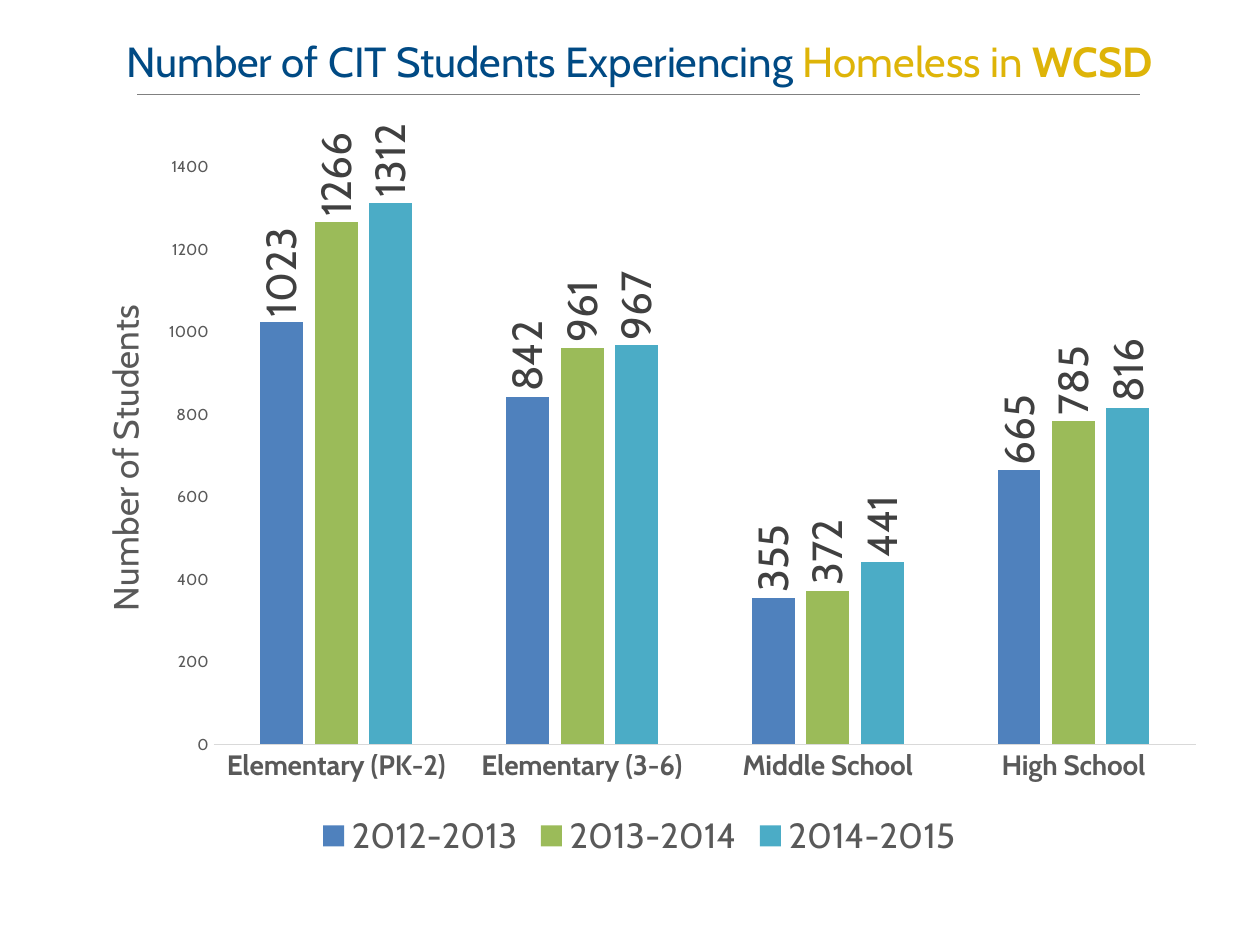
"""Build a slide with a column chart of students experiencing homelessness by school level."""
from dataclasses import dataclass

from lxml import etree
from pptx import Presentation
from pptx import util as u
from pptx.chart import data as chart_data
from pptx.dml import color
from pptx.enum import chart as ch, shapes, text
from pptx.oxml import ns

WIDTH, HEIGHT = u.Inches(10), u.Inches(7.5)
FONT = "Cabin"
COLORS = {
    "navy": "004A84", "gold": "DEB408", "rule": "808080", "axis": "D9D9D9",
    "gray": "595959", "label": "404040",
    "blue": "4F81BD", "green": "9BBB59", "teal": "4BACC6",
}
LEVELS = ["Elementary (PK-2)", "Elementary (3-6)", "Middle School", "High School"]


@dataclass(frozen=True)
class Year:
    name: str
    counts: tuple
    color: str


@dataclass(frozen=True)
class Area:
    left: float
    top: float
    width: float
    height: float

    def on_slide(self) -> tuple:
        """Turn shares of the slide into lengths."""
        return (int(self.left * WIDTH), int(self.top * HEIGHT),
                int(self.width * WIDTH), int(self.height * HEIGHT))


YEARS = [
    Year("2012-2013", (1023, 842, 355, 665), "blue"),
    Year("2013-2014", (1266, 961, 372, 785), "green"),
    Year("2014-2015", (1312, 967, 441, 816), "teal"),
]
TITLE_AREA = Area(0.047, 0.031, 0.921, 0.115)
CHART_AREA = Area(0.047, 0.116, 0.921, 0.799)


def rgb(name: str) -> color.RGBColor:
    """Look up a named colour."""
    return color.RGBColor.from_string(COLORS[name])


def format_font(font, *, size: float, tint: str, bold: bool = False) -> None:
    """Set the face, size, colour and weight of a font."""
    font.name, font.size, font.bold = FONT, u.Pt(size), bold
    font.color.rgb = rgb(tint)


def add_text(para, words: str, **style) -> None:
    """Add one formatted span to a paragraph."""
    span = para.add_run()
    span.text = words
    format_font(span.font, **style)


def set_layout(parent, **shares: float) -> None:
    """Place a chart part by shares of the chart's size."""
    layout = parent.find(ns.qn("c:layout"))
    if layout is None:
        layout = etree.Element(ns.qn("c:layout"))
        before = parent.find(ns.qn("c:tx"))
        parent.insert(0 if before is None else parent.index(before) + 1, layout)
    manual = etree.SubElement(layout, ns.qn("c:manualLayout"))
    settings = {"layoutTarget": "inner"} if "w" in shares else {}
    settings |= {"xMode": "edge", "yMode": "edge"} | shares
    for tag, value in settings.items():
        etree.SubElement(manual, ns.qn(f"c:{tag}"), val=str(value))


def add_title(page) -> None:
    """Fill the title placeholder and draw the rule below it."""
    box = page.shapes.title
    box.left, box.top, box.width, box.height = TITLE_AREA.on_slide()
    frame = box.text_frame
    frame.word_wrap = True
    frame.vertical_anchor = text.MSO_ANCHOR.TOP
    para = frame.paragraphs[0]
    para.alignment = text.PP_ALIGN.CENTER
    add_text(para, "Number of CIT Students Experiencing ", size=24, tint="navy")
    add_text(para, "Homeless in ", size=24, tint="gold")
    add_text(para, "WCSD", size=24, tint="gold", bold=True)


def add_rule(page) -> None:
    """Draw the thin line under the title."""
    left, top, width, _ = Area(0.109, 0.1, 0.796, 0).on_slide()
    rule = page.shapes.add_connector(shapes.MSO_CONNECTOR.STRAIGHT, left, top, left + width, top)
    rule.line.color.rgb = rgb("rule")
    rule.line.width = u.Pt(0.75)
    etree.SubElement(rule._element.spPr, ns.qn("a:effectLst"))


def format_axes(chart) -> None:
    """Style the level axis and the student count axis."""
    levels, counts = chart.category_axis, chart.value_axis
    for axis in (levels, counts):
        axis.has_major_gridlines = False
        axis.major_tick_mark = axis.minor_tick_mark = ch.XL_TICK_MARK.NONE
    format_font(levels.tick_labels.font, size=16, tint="gray", bold=True)
    levels.format.line.color.rgb = rgb("axis")
    levels.format.line.width = u.Pt(0.75)
    format_font(counts.tick_labels.font, size=9, tint="gray")
    counts.format.line.fill.background()
    counts.minimum_scale, counts.maximum_scale, counts.major_unit = 0, 1500, 200
    title = counts.axis_title
    frame = title.text_frame
    add_text(frame.paragraphs[0], "Number of Students", size=20, tint="gray")
    frame._txBody.bodyPr.set("rot", "-5400000")
    frame._txBody.bodyPr.set("vert", "horz")
    set_layout(title._element, x=0.03, y=0.25)


def format_series(series, year: Year) -> None:
    """Fill one year's columns and turn its value labels upright."""
    series.format.fill.solid()
    series.format.fill.fore_color.rgb = rgb(year.color)
    series.invert_if_negative = False
    labels = series.data_labels
    labels.show_value = True
    labels.position = ch.XL_LABEL_POSITION.OUTSIDE_END
    format_font(labels.font, size=24, tint="label")
    body = labels._element.find(ns.qn("c:txPr")).find(ns.qn("a:bodyPr"))
    body.set("rot", "-5400000")
    body.set("vert", "horz")


def add_student_chart(page) -> None:
    """Add the clustered columns with their legend."""
    table = chart_data.CategoryChartData()
    table.categories = LEVELS
    for year in YEARS:
        table.add_series(year.name, year.counts)
    frame = page.shapes.add_chart(ch.XL_CHART_TYPE.COLUMN_CLUSTERED, *CHART_AREA.on_slide(), table)
    chart = frame.chart
    chart.has_title = False
    chart.font.name, chart.font.size = FONT, u.Pt(10)
    chart.has_legend = True
    chart.legend.position = ch.XL_LEGEND_POSITION.BOTTOM
    chart.legend.include_in_layout = False
    format_font(chart.legend.font, size=20, tint="gray")
    plot = chart.plots[0]
    plot.gap_width, plot.overlap, plot.vary_by_categories = 219, -27, False
    for series, year in zip(plot.series, YEARS):
        format_series(series, year)
    format_axes(chart)
    plot_area = chart._chartSpace.chart.plotArea
    set_layout(plot_area, x=0.133, y=0.021, w=0.847, h=0.82)


def main() -> None:
    """Build the deck and save it."""
    deck = Presentation()
    deck.slide_width, deck.slide_height = WIDTH, HEIGHT
    page = deck.slides.add_slide(deck.slide_layouts[5])
    add_title(page)
    add_student_chart(page)
    add_rule(page)
    deck.save("out.pptx")


if __name__ == "__main__":
    main()
